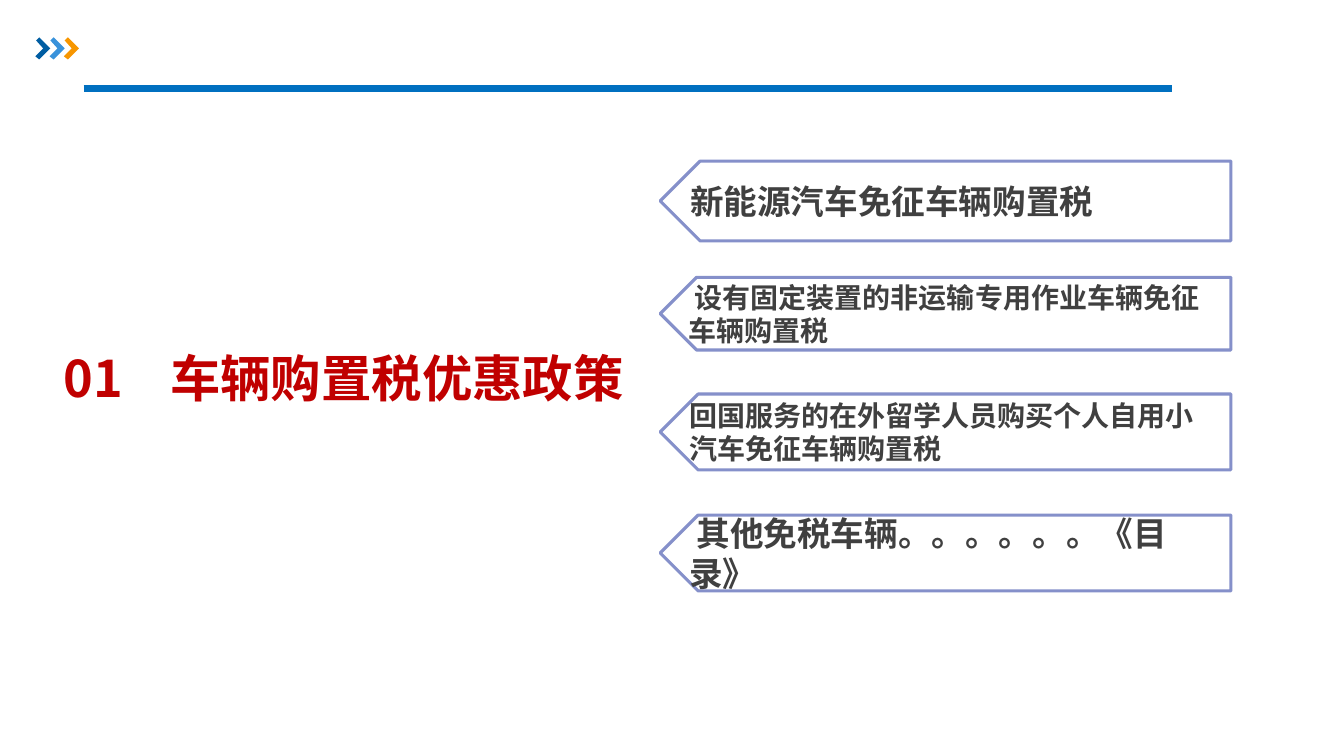
from dataclasses import dataclass

from lxml.etree import SubElement
from pptx import Presentation
from pptx.dml.color import RGBColor
from pptx.enum.shapes import MSO_CONNECTOR, MSO_SHAPE
from pptx.enum.text import MSO_ANCHOR, PP_ALIGN
from pptx.oxml.ns import qn
from pptx.util import Cm, Pt


@dataclass(frozen=True)
class Theme:
    font: str = "Noto Sans CJK SC"
    rule: str = "0070C0"
    chevrons: tuple = ("005DA2", "3992DB", "F79600")
    title: str = "C00000"
    body: str = "404040"
    tag_fill: str = "FFFFFF"
    tag_line: str = "8590CA"
    title_size: int = 36
    large_size: int = 24
    small_size: int = 20


THEME = Theme()

# Top, height, type size, first-line indent (cm) and wording of each policy
POLICIES = (
    (4.06, 2.01, THEME.large_size, 0, "新能源汽车免征车辆购置税"),
    (6.99, 1.83, THEME.small_size, 0.16, "设有固定装置的非运输专用作业车辆免征车辆购置税"),
    (9.93, 1.91, THEME.small_size, 0, "回国服务的在外留学人员购买个人自用小汽车免征车辆购置税"),
    (12.98, 1.91, THEME.large_size, 0.19, "其他免税车辆。。。。。。《目录》"),
)


def color(value):
    return RGBColor.from_string(value)


def write_text(shape, text, *, size, fill, anchor=MSO_ANCHOR.TOP,
               line_spacing=None, indent=0, tab_stop=None):
    frame = shape.text_frame
    frame.word_wrap = True
    frame.vertical_anchor = anchor
    paragraph = frame.paragraphs[0]
    paragraph.alignment = PP_ALIGN.LEFT
    if line_spacing:
        paragraph.line_spacing = line_spacing
    properties = paragraph._p.get_or_add_pPr()
    if indent:
        properties.set("indent", str(Cm(indent)))
    if tab_stop:
        stops = SubElement(properties, qn("a:tabLst"))
        SubElement(stops, qn("a:tab"), pos=str(Cm(tab_stop)), algn="l")
    run = paragraph.add_run()
    run.text = text
    run.font.size = Pt(size)
    run.font.bold = True
    run.font.name = THEME.font
    run.font.color.rgb = color(fill)
    SubElement(run._r.get_or_add_rPr(), qn("a:ea"), typeface=THEME.font)


def add_rule(slide):
    rule = slide.shapes.add_connector(
        MSO_CONNECTOR.STRAIGHT, Cm(2.11), Cm(2.24), Cm(29.54), Cm(2.24))
    rule.line.color.rgb = color(THEME.rule)
    rule.line.width = Pt(5)
    SubElement(rule._element.spPr, qn("a:effectLst"))


def add_chevron(group, left, top, fill):
    offsets = ((0.02, 0.08), (0.1, 0), (0.38, 0.28),
               (0.1, 0.56), (0, 0.48), (0.2, 0.28))
    points = [(Cm(left + x), Cm(top + y)) for x, y in offsets]
    builder = group.shapes.build_freeform(*points[0])
    builder.add_line_segments(points[1:], close=True)
    chevron = builder.convert_to_shape()
    chevron.shadow.inherit = False
    chevron.fill.solid()
    chevron.fill.fore_color.rgb = color(fill)
    chevron.line.fill.background()


def add_policy_tag(slide, top, height, size, indent, text):
    tag = slide.shapes.add_shape(
        MSO_SHAPE.PENTAGON, Cm(16.64), Cm(top), Cm(14.38), Cm(height))
    tag._element.spPr.xfrm.set("flipH", "1")
    tag.shadow.inherit = False
    tag.fill.solid()
    tag.fill.fore_color.rgb = color(THEME.tag_fill)
    tag.line.color.rgb = color(THEME.tag_line)
    tag.line.width = Pt(2.25)
    write_text(tag, text, size=size, fill=THEME.body,
               anchor=MSO_ANCHOR.MIDDLE, indent=indent)


def main():
    presentation = Presentation()
    presentation.slide_width = Cm(33.87)
    presentation.slide_height = Cm(19.05)
    slide = presentation.slides.add_slide(presentation.slide_layouts[6])

    # Header
    add_rule(slide)
    chevrons = slide.shapes.add_group_shape()
    for index, fill in enumerate(THEME.chevrons):
        add_chevron(chevrons, 0.89 + 0.36 * index, 0.94, fill)

    # Section title
    title = slide.shapes.add_textbox(Cm(1.35), Cm(7.85), Cm(14.78), Cm(2.59))
    write_text(title, "01\t车辆购置税优惠政策", size=THEME.title_size,
               fill=THEME.title, line_spacing=1.5, tab_stop=2.69)

    # Policy list
    for policy in POLICIES:
        add_policy_tag(slide, *policy)

    presentation.save("out.pptx")


if __name__ == "__main__":
    main()
